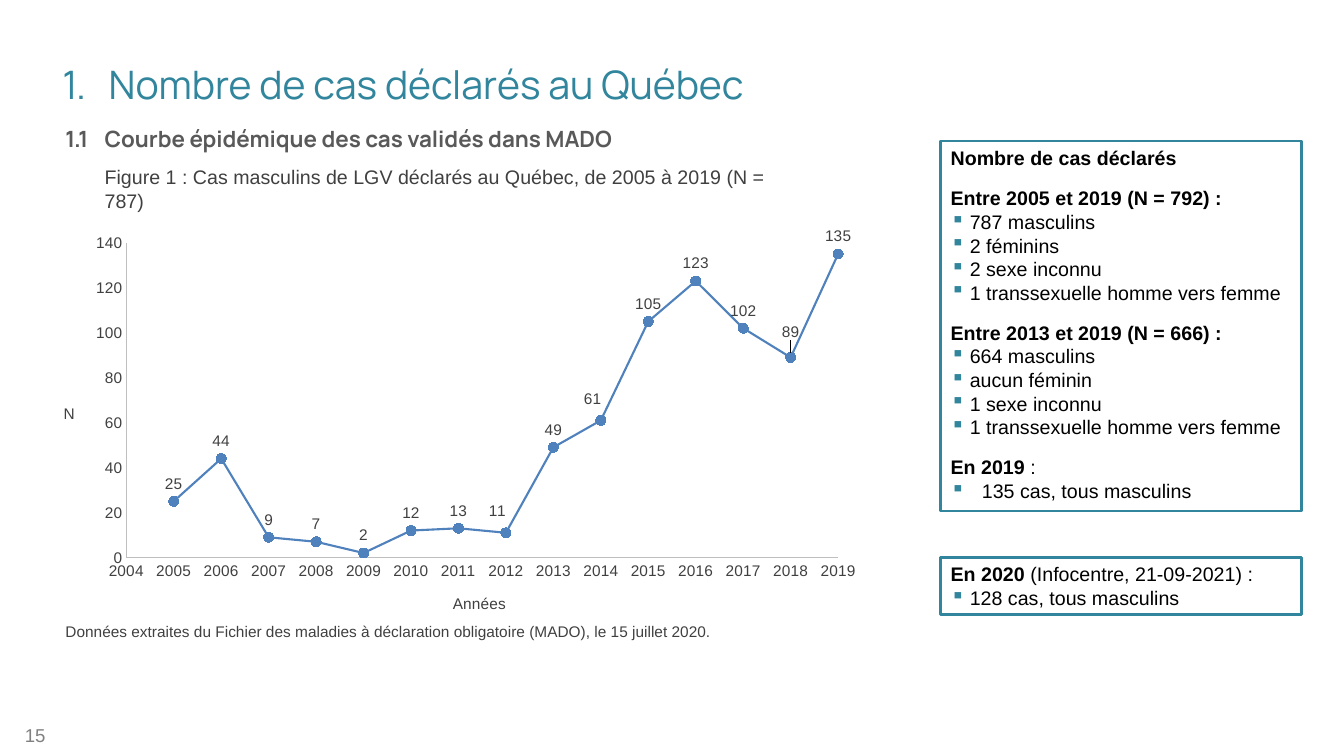
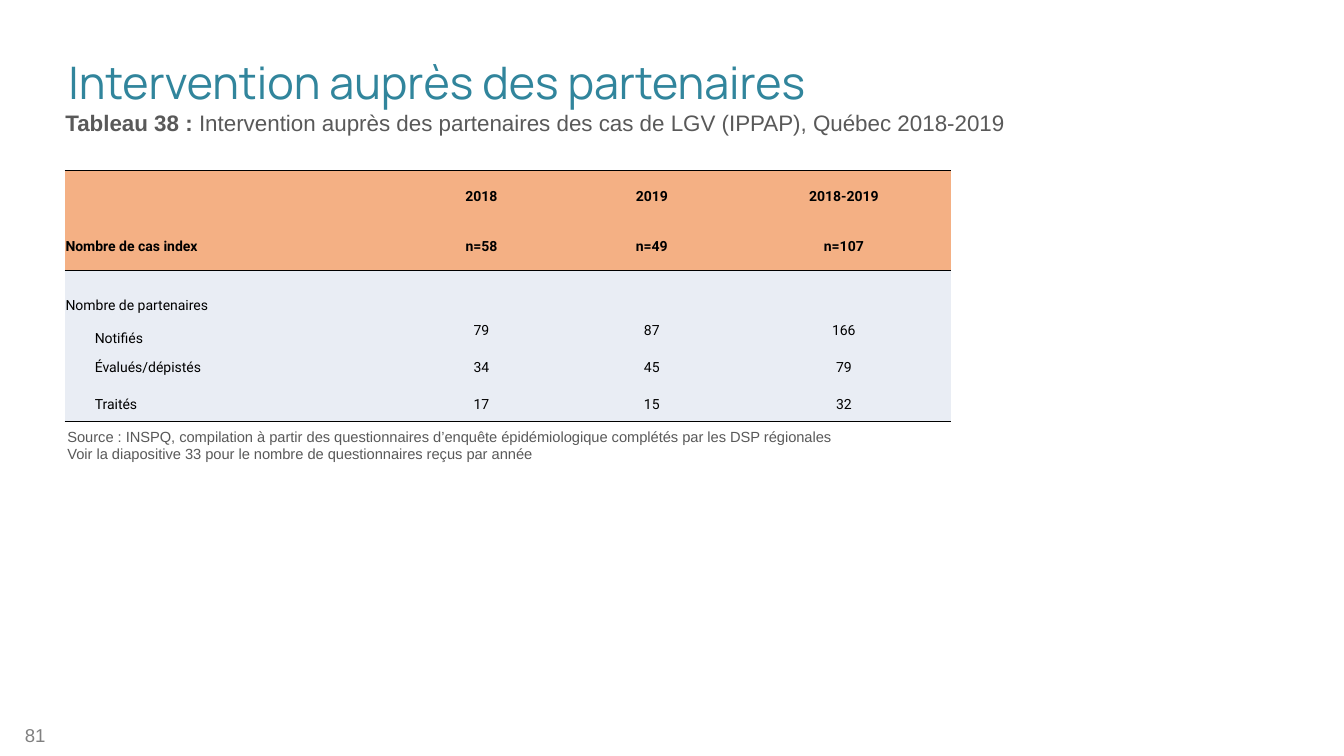
"""Builds two slides on reported LGV cases: an epidemic curve and a partner table."""
from lxml import etree
from pptx import Presentation
from pptx.chart.data import XyChartData
from pptx.dml.color import RGBColor
from pptx.enum.chart import (XL_AXIS_CROSSES, XL_CHART_TYPE, XL_LABEL_POSITION,
                             XL_MARKER_STYLE, XL_TICK_MARK)
from pptx.enum.shapes import MSO_SHAPE
from pptx.enum.text import MSO_ANCHOR, PP_ALIGN
from pptx.oxml.ns import qn
from pptx.util import Inches, Pt

LEFT, CENTER, RIGHT = PP_ALIGN.LEFT, PP_ALIGN.CENTER, PP_ALIGN.RIGHT
TOP, MIDDLE, BOTTOM = MSO_ANCHOR.TOP, MSO_ANCHOR.MIDDLE, MSO_ANCHOR.BOTTOM
RECTANGLE = MSO_SHAPE.RECTANGLE
SCATTER_LINES = XL_CHART_TYPE.XY_SCATTER_LINES
CIRCLE = XL_MARKER_STYLE.CIRCLE
ABOVE = XL_LABEL_POSITION.ABOVE
NO_TICK = XL_TICK_MARK.NONE
AXIS_MINIMUM = XL_AXIS_CROSSES.MINIMUM

TEAL = RGBColor(0x31, 0x85, 0x9C)
BLUE = RGBColor(0x4F, 0x81, 0xBD)
BLACK = RGBColor(0, 0, 0)
WHITE = RGBColor(0xFF, 0xFF, 0xFF)
DARK_GRAY = RGBColor(0x40, 0x40, 0x40)
GRAY = RGBColor(0x59, 0x59, 0x59)
NUMBER_GRAY = RGBColor(0x80, 0x80, 0x80)
AXIS_GRAY = RGBColor(0xBF, 0xBF, 0xBF)
ORANGE = RGBColor(0xF4, 0xB0, 0x84)
PALE_BLUE = RGBColor(0xE9, 0xED, 0xF4)

BODY_FONT, TITLE_FONT, TABLE_FONT = "Arial", "Manrope", "Roboto"
PLAIN_TABLE_STYLE = "{2D5ABB26-0587-4C30-8999-92F81FD0307C}"

FIRST_YEAR = 2005
CASES = [25, 44, 9, 7, 2, 12, 13, 11, 49, 61, 105, 123, 102, 89, 135]
LABEL_SHIFTS = {7: (-0.01, -0.01), 9: (-0.01, -0.01), 13: (0, -0.02)}

CASE_GROUPS = [
    ("Entre 2005 et 2019 (N = 792) :", "",
     ["787 masculins", "2 féminins", "2 sexe inconnu",
      "1 transsexuelle homme vers femme"], 0.19),
    ("Entre 2013 et 2019 (N = 666) :", "",
     ["664 masculins", "aucun féminin", "1 sexe inconnu",
      "1 transsexuelle homme vers femme"], 0.19),
    ("En 2019 ", ":", ["135 cas, tous masculins"], 0.31),
]
RECENT_GROUP = ("En 2020 ", "(Infocentre, 21-09-2021) :", ["128 cas, tous masculins"], 0.19)

COLUMN_WIDTHS = [3.29, 1.69, 1.69, 2.12]
ROW_HEIGHTS = [0.52, 0.47, 0.43, 0.33, 0.41, 0.33]
HEADER_ROWS = 2
PARTNER_ROWS = [
    ("", "2018", "2019", "2018-2019"),
    ("Nombre de cas index", "n=58", "n=49", "n=107"),
    ("Nombre de partenaires", "", "", ""),
    ("Notifiés", "79", "87", "166"),
    ("Évalués/dépistés", "34", "45", "79"),
    ("Traités", "17", "15", "32"),
]
BOTTOM_LABELS = ("Nombre de partenaires", "Notifiés")
ROW_RULES = {0: "a:lnT", 1: "a:lnB", 5: "a:lnB"}


def write_paragraph(paragraph, runs, *, size, color, font=BODY_FONT, align=LEFT,
                    hanging=0, bullet=False, after=0, line_spacing=None):
    """Fill a paragraph with (text, bold) runs."""
    properties = paragraph._p.get_or_add_pPr()
    if hanging:
        properties.set("marL", str(Inches(hanging)))
        properties.set("indent", str(-Inches(hanging)))
    if bullet:
        bullet_color = etree.SubElement(properties, qn("a:buClr"))
        etree.SubElement(bullet_color, qn("a:srgbClr"), val=str(TEAL))
        etree.SubElement(properties, qn("a:buChar"), char="▪")
    paragraph.alignment = align
    paragraph.space_after = Pt(after)
    if line_spacing:
        paragraph.line_spacing = line_spacing
    for text, bold in runs:
        run = paragraph.add_run()
        run.text = text
        run.font.name, run.font.size, run.font.bold = font, Pt(size), bold
        run.font.color.rgb = color


def fill_frame(frame, paragraphs, *, anchor=TOP, **style):
    """Write (runs, options) paragraphs in a text frame."""
    frame.word_wrap = True
    frame.vertical_anchor = anchor
    for index, (runs, options) in enumerate(paragraphs):
        paragraph = frame.add_paragraph() if index else frame.paragraphs[0]
        write_paragraph(paragraph, runs, **{**style, **options})


def add_text(slide, box, *lines, anchor=TOP, **style):
    """Add a text box; each line is a list of (text, bold) runs."""
    shape = slide.shapes.add_textbox(*map(Inches, box))
    fill_frame(shape.text_frame, [(runs, {}) for runs in lines], anchor=anchor, **style)


def add_slide(presentation, number):
    """Add a blank slide with its page number."""
    slide = presentation.slides.add_slide(presentation.slide_layouts[6])
    add_text(slide, (0, 7.09, 0.55, 0.4), [(str(number), False)],
             size=13.3, color=NUMBER_GRAY, align=RIGHT, anchor=MIDDLE)
    return slide


def add_title(slide, box, text, **style):
    """Add a slide title."""
    add_text(slide, box, [(text, False)], font=TITLE_FONT, color=TEAL, **style)


def group_paragraphs(heading, detail, items, hanging, after=0):
    """Turn a group of counts into a heading and its bullets."""
    runs = [(heading, True)] + ([(detail, False)] if detail else [])
    bullets = [([(item, False)], {"hanging": hanging, "bullet": True}) for item in items]
    bullets[-1][1]["after"] = after
    return [(runs, {})] + bullets


def add_panel(slide, box, paragraphs):
    """Add an outlined panel of counts."""
    panel = slide.shapes.add_shape(RECTANGLE, *map(Inches, box))
    panel.shadow.inherit = False
    panel.fill.solid()
    panel.fill.fore_color.rgb = WHITE
    panel.line.color.rgb = TEAL
    panel.line.width = Pt(2)
    fill_frame(panel.text_frame, paragraphs, size=14, color=BLACK)


def set_layout(parent, position, **values):
    """Give a chart part a manual layout."""
    for layout in parent.findall(qn("c:layout")):
        parent.remove(layout)
    layout = etree.Element(qn("c:layout"))
    parent.insert(position, layout)
    manual = etree.SubElement(layout, qn("c:manualLayout"))
    for name, value in values.items():
        etree.SubElement(manual, qn(f"c:{name}"), val=str(value))


def format_axis(axis, title, low, high, step, left, top):
    """Set the scale, line and placed title of an axis."""
    axis.minimum_scale, axis.maximum_scale, axis.major_unit = low, high, step
    axis.has_major_gridlines = False
    axis.major_tick_mark = axis.minor_tick_mark = NO_TICK
    axis.crosses = AXIS_MINIMUM
    axis.tick_labels.number_format = "General"
    axis.tick_labels.number_format_is_linked = False
    axis.format.line.color.rgb = AXIS_GRAY
    axis.format.line.width = Pt(0.75)
    frame = axis.axis_title.text_frame
    write_paragraph(frame.paragraphs[0], [(title, False)], size=11, color=DARK_GRAY)
    element = axis.axis_title._element
    body = element.find(f".//{qn('a:bodyPr')}")
    body.set("rot", "0")
    body.set("vert", "horz")
    set_layout(element, 1, xMode="edge", yMode="edge", x=left, y=top)


def add_curve(slide, box):
    """Add the epidemic curve."""
    data = XyChartData(number_format="General")
    points = data.add_series("Cas masculins")
    for year, count in enumerate(CASES, FIRST_YEAR):
        points.add_data_point(year, count)
    chart = slide.shapes.add_chart(SCATTER_LINES, *map(Inches, box), data).chart
    chart.has_legend = chart.has_title = False
    chart.font.name, chart.font.size = BODY_FONT, Pt(11)
    chart.font.color.rgb = DARK_GRAY
    format_axis(chart.category_axis, "Années", 2004, 2019, 1, 0.49, 0.9)
    format_axis(chart.value_axis, "N", 0, 140, 20, 0.02, 0.43)
    plot = chart.plots[0]
    plot.vary_by_categories = False
    set_layout(chart._chartSpace.find(f".//{qn('c:plotArea')}"), 0, layoutTarget="inner",
               xMode="edge", yMode="edge", x=0.099, y=0.042, w=0.86, h=0.777)

    series = plot.series[0]
    series.format.line.color.rgb = BLUE
    series.format.line.width = Pt(1.5)
    series.marker.style, series.marker.size = CIRCLE, 7
    series.marker.format.fill.solid()
    series.marker.format.fill.fore_color.rgb = BLUE
    series.marker.format.line.color.rgb = BLUE
    for index in range(len(CASES)):
        label = series.points[index].data_label
        label.font.name, label.font.size = BODY_FONT, Pt(11)
        label.font.color.rgb = DARK_GRAY
        label.position = ABOVE
    labels = series._element.findall(f".//{qn('c:dLbl')}")
    for index, (across, down) in LABEL_SHIFTS.items():
        set_layout(labels[index], 1, x=across, y=down)


def add_rule(cell, side):
    """Draw a black rule on one side of a cell."""
    rule = etree.Element(qn(side), w=str(Pt(1)))
    fill = etree.SubElement(rule, qn("a:solidFill"))
    etree.SubElement(fill, qn("a:srgbClr"), val=str(BLACK))
    cell._tc.get_or_add_tcPr().insert(0, rule)


def add_partner_table(slide, left, top):
    """Add the table of partners by year."""
    frame = slide.shapes.add_table(
        len(ROW_HEIGHTS), len(COLUMN_WIDTHS), Inches(left), Inches(top),
        Inches(sum(COLUMN_WIDTHS)), Inches(sum(ROW_HEIGHTS)))
    table = frame.table
    table.first_row = table.horz_banding = False
    table._tbl.tblPr.find(qn("a:tableStyleId")).text = PLAIN_TABLE_STYLE
    for column, width in zip(table.columns, COLUMN_WIDTHS):
        column.width = Inches(width)
    for row_index, values in enumerate(PARTNER_ROWS):
        table.rows[row_index].height = Inches(ROW_HEIGHTS[row_index])
        header = row_index < HEADER_ROWS
        for column_index, text in enumerate(values):
            cell = table.cell(row_index, column_index)
            indented = column_index == 0 and row_index > HEADER_ROWS
            cell.margin_left = Inches(0.3 if indented else 0.01)
            cell.margin_top = cell.margin_right = Inches(0.01)
            cell.margin_bottom = 0
            cell.vertical_anchor = BOTTOM if text in BOTTOM_LABELS else MIDDLE
            cell.fill.solid()
            cell.fill.fore_color.rgb = ORANGE if header else PALE_BLUE
            if row_index in ROW_RULES:
                add_rule(cell, ROW_RULES[row_index])
            if text:
                write_paragraph(cell.text_frame.paragraphs[0], [(text, header)], size=10,
                                color=BLACK, font=TABLE_FONT,
                                align=CENTER if column_index else LEFT)


def build_curve_slide(presentation):
    """Build the slide with the epidemic curve."""
    slide = add_slide(presentation, 15)
    add_title(slide, (0.52, 0.52, 8.11, 0.39), "1.\tNombre de cas déclarés au Québec",
              size=28, hanging=0.46, line_spacing=1.5, after=3, anchor=MIDDLE)
    add_text(slide, (0.55, 1.06, 6.5, 0.46),
             [("1.1\tCourbe épidémique des cas validés dans MADO", True)],
             size=16, font=TITLE_FONT, color=GRAY, hanging=0.39, line_spacing=1.5, after=3)
    add_text(slide, (0.94, 1.59, 7.13, 0.55),
             [("Figure 1 : Cas masculins de LGV déclarés au Québec, de 2005 à 2019 (N = 787)",
               False)], size=14, color=DARK_GRAY)
    add_curve(slide, (0.44, 2.24, 8.21, 4.02))
    add_text(slide, (0.55, 6.12, 6.78, 0.29),
             [("Données extraites du Fichier des maladies à déclaration obligatoire (MADO), "
               "le 15 juillet 2020.", False)], size=11, color=DARK_GRAY)
    paragraphs = [([("Nombre de cas déclarés", True)], {"after": 12})]
    for group in CASE_GROUPS:
        paragraphs += group_paragraphs(*group, after=0 if group is CASE_GROUPS[-1] else 12)
    add_panel(slide, (9.33, 1.4, 3.58, 3.67), paragraphs)
    add_panel(slide, (9.33, 5.53, 3.58, 0.57), group_paragraphs(*RECENT_GROUP))


def build_partner_slide(presentation):
    """Build the slide with the partner table."""
    slide = add_slide(presentation, 81)
    add_title(slide, (0.58, 0.44, 8.47, 0.65), "Intervention auprès des partenaires",
              size=32, line_spacing=1.1)
    add_text(slide, (0.55, 1.03, 11.26, 0.37),
             [("Tableau 38 : ", True),
              ("Intervention auprès des partenaires des cas de LGV (IPPAP), Québec 2018-2019",
               False)], size=16, color=GRAY)
    add_partner_table(slide, 0.64, 1.69)
    add_text(slide, (0.57, 4.19, 11.02, 0.45),
             [("Source : INSPQ, compilation à partir des questionnaires d’enquête "
               "épidémiologique complétés par les DSP régionales", False)],
             [("Voir la diapositive 33 pour le nombre de questionnaires reçus par année", False)],
             size=10.5, color=GRAY)


def main():
    """Build and save the presentation."""
    presentation = Presentation()
    presentation.slide_width, presentation.slide_height = Inches(13.33), Inches(7.5)
    build_curve_slide(presentation)
    build_partner_slide(presentation)
    presentation.save("out.pptx")


if __name__ == "__main__":
    main()
